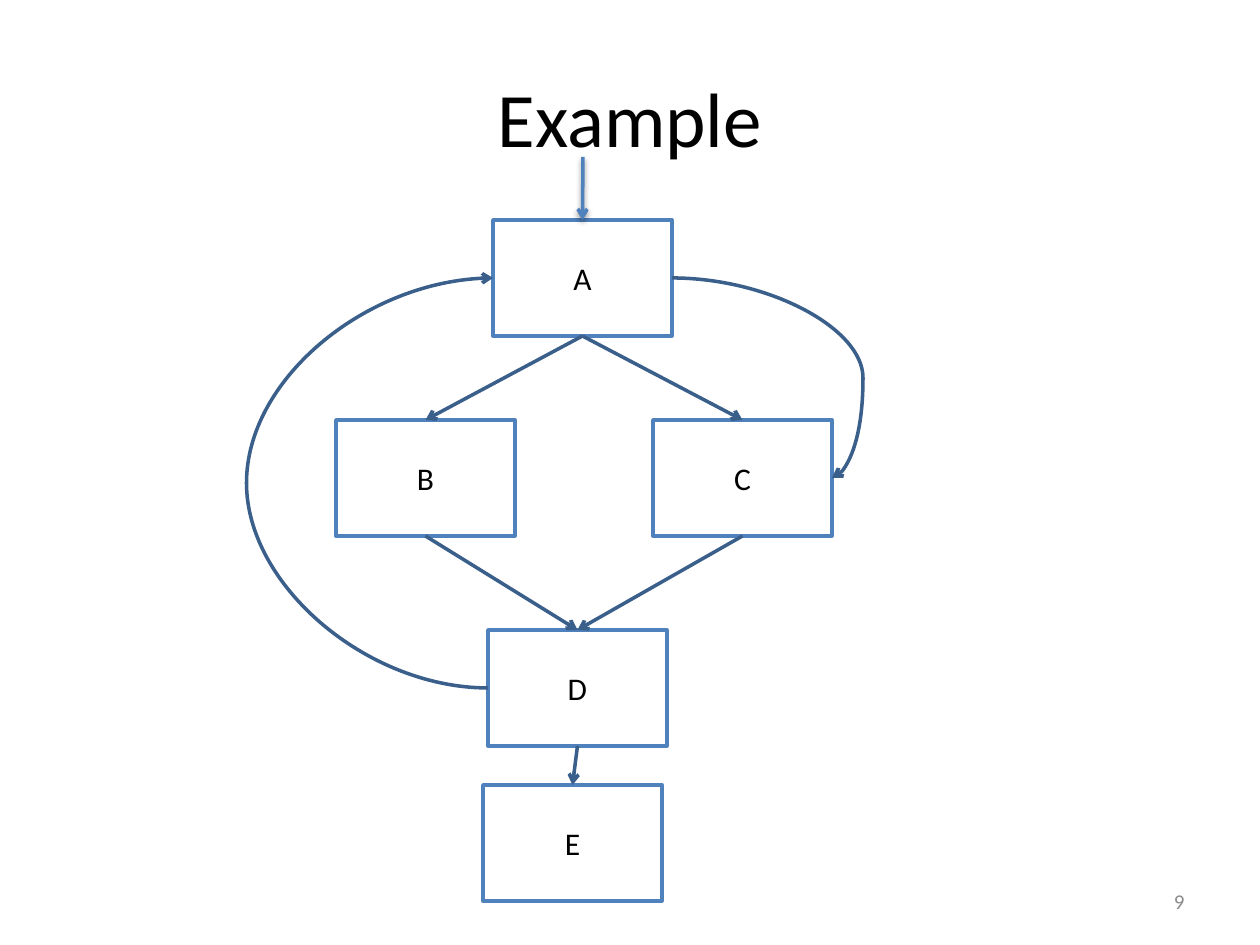
from lxml.etree import SubElement as Sub
from pptx import Presentation
from pptx.dml.color import RGBColor as Rgb
from pptx.enum.shapes import MSO_CONNECTOR as Con, MSO_SHAPE as Shape
from pptx.enum.text import MSO_ANCHOR as Anchor, PP_ALIGN as Align
from pptx.oxml.ns import qn
from pptx.util import Emu, Pt

SCALE = 914400 / 126
INK = {"black": "000000", "white": "FFFFFF", "grey": "8B8B8B",
       "blue": "4F81BD", "navy": "3A5F8B"}
TOP, LEFT, BOTTOM, RIGHT = range(4)


def px(n):
    return Emu(round(n * SCALE))


def ink(name):
    return Rgb.from_string(INK[name])


class Board:
    """Holds the style and the current slide."""
    font = "Calibri"
    width = Pt(2)

    def __init__(self, slide):
        self.slide = slide
        self.shapes = slide.shapes

    def words(self, shape, text, size, color="black", align=Align.CENTER):
        frame = shape.text_frame
        para = frame.paragraphs[0]
        run = para.add_run()
        looks = [(frame, {"word_wrap": True, "vertical_anchor": Anchor.MIDDLE}),
                 (para, {"alignment": align}),
                 (run, {"text": text}),
                 (run.font, {"name": self.font, "size": Pt(size)}),
                 (run.font.color, {"rgb": ink(color)})]
        for part, look in looks:
            for key, val in look.items():
                setattr(part, key, val)

    def label(self, area, text, size, **look):
        self.words(self.shapes.add_textbox(*map(px, area)), text, size, **look)

    def stroke(self, shape, color):
        shape.line.color.rgb = ink(color)
        shape.line.width = self.width

    def box(self, area, text):
        shape = self.shapes.add_shape(Shape.RECTANGLE, *map(px, area))
        shape.shadow.inherit = False
        shape.fill.solid()
        shape.fill.fore_color.rgb = ink("white")
        self.stroke(shape, "blue")
        self.words(shape, text, 18)
        return shape

    def arrow(self, end, start=None, point=(0, 0), bend=None,
              color="navy", shade=False):
        """Run from a (box, side) or a free point to a (box, side).

        bend is the x that a curved arrow swings out to.
        """
        kind = Con.STRAIGHT if bend is None else Con.CURVE
        x, y = map(px, point)
        line = self.shapes.add_connector(kind, x, y, x, y)
        if start:
            line.begin_connect(*start)
        line.end_connect(*end)
        self.stroke(line, color)
        prop = line._element.spPr
        Sub(prop.find(qn("a:ln")), qn("a:tailEnd"), type="arrow")
        effect = Sub(prop, qn("a:effectLst"))
        if shade:
            cast = Sub(effect, qn("a:outerShdw"), blurRad="40000",
                       dist="20000", dir="5400000", rotWithShape="0")
            tint = Sub(cast, qn("a:srgbClr"), val=INK["black"])
            Sub(tint, qn("a:alpha"), val="38000")
        if bend is not None:
            ratio = (px(bend) - line.begin_x) / (line.end_x - line.begin_x)
            guides = prop.find(qn("a:prstGeom")).find(qn("a:avLst"))
            Sub(guides, qn("a:gd"), name="adj1",
                fmla=f"val {round(ratio * 100000)}")


def main():
    deck = Presentation()
    deck.slide_width, deck.slide_height = px(1260), px(945)
    board = Board(deck.slides.add_slide(deck.slide_layouts[6]))

    board.label((903, 876, 294, 50), "9", 12, color="grey", align=Align.RIGHT)

    spots = {"A": (493, 220), "B": (336, 420), "C": (653, 420),
             "D": (488, 630), "E": (483, 785)}
    node = {name: board.box((*spot, 179, 116), name)
            for name, spot in spots.items()}

    for tail, head in ("AB", "AC", "BD", "CD", "DE"):
        board.arrow((node[head], TOP), (node[tail], BOTTOM))
    board.arrow((node["C"], RIGHT), (node["A"], RIGHT), bend=863)
    board.arrow((node["A"], LEFT), (node["D"], LEFT), bend=247)
    board.arrow((node["A"], TOP), point=(583, 157), color="blue", shade=True)

    board.label((63, 38, 1134, 157), "Example", 44)
    deck.save("out.pptx")


if __name__ == "__main__":
    main()
